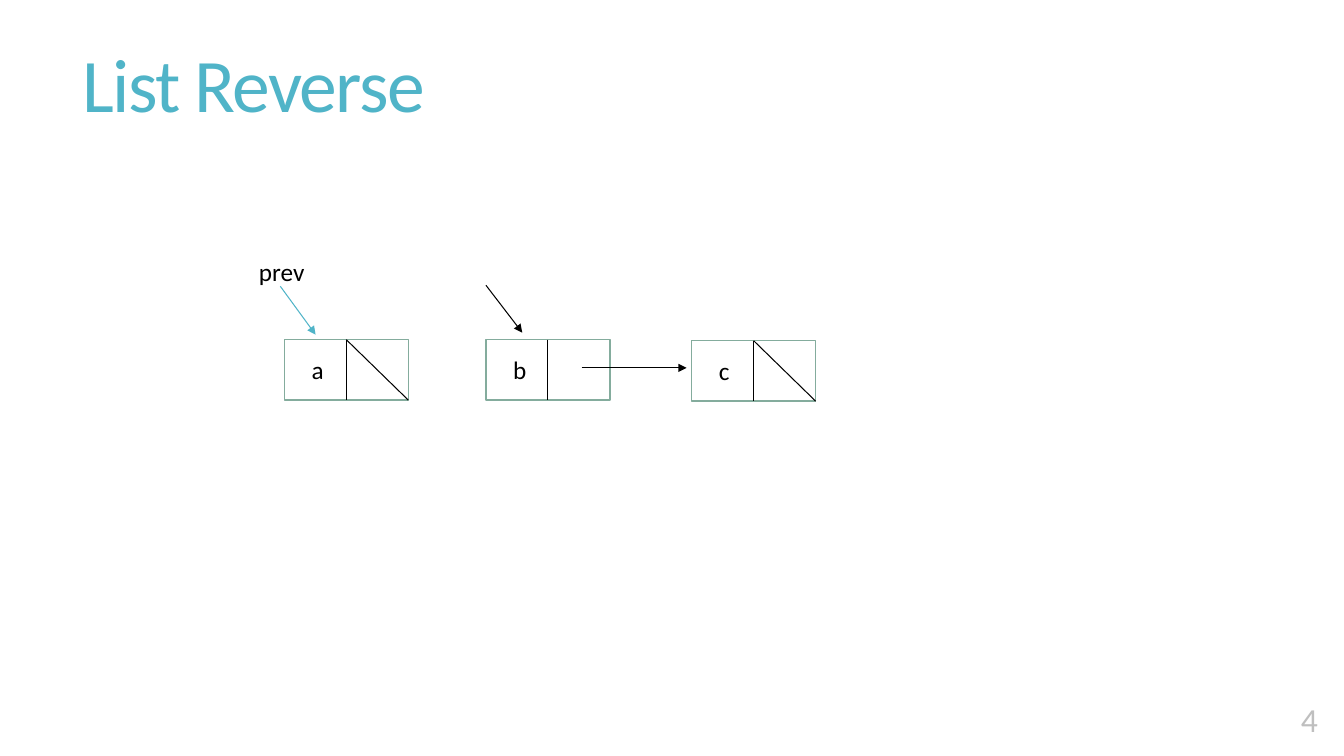
from dataclasses import dataclass

from lxml.etree import SubElement
from pptx import Presentation
from pptx.dml.color import RGBColor
from pptx.enum.shapes import MSO_CONNECTOR as CONN, MSO_SHAPE as SHAPE
from pptx.enum.text import MSO_ANCHOR as ANCHOR, PP_ALIGN as ALIGN
from pptx.oxml.ns import qn
from pptx.util import Inches, Pt

COLORS = {
    "accent": "50B4C8",
    "border": "84AC9D",
    "black": "000000",
    "white": "FFFFFF",
    "number": "BFBFBF",
}
FONT = "Calibri"
NODE_W, NODE_H = 1.23, 0.6


@dataclass
class Node:
    label: str
    x: float
    y: float
    is_last: bool


@dataclass
class Arrow:
    x1: float
    y1: float
    x2: float
    y2: float
    color: str = "black"


NODES = [
    Node("a", 2.82, 3.37, True),
    Node("b", 4.82, 3.37, False),
    Node("c", 6.86, 3.38, True),
]
ARROWS = [
    Arrow(2.78, 2.84, 3.13, 3.32, "accent"),
    Arrow(4.82, 2.83, 5.18, 3.3),
    Arrow(5.77, 3.65, 6.81, 3.65),
]


def rgb(name: str) -> RGBColor:
    return RGBColor.from_string(COLORS[name])


def write(sp, text: str, *, size: float = 18, color: str = "black",
          align=ALIGN.LEFT, anchor=ANCHOR.TOP, left: float = 0.1,
          line_spacing: float = 1.0, tracking: float = 0) -> None:
    tf = sp.text_frame
    tf.word_wrap = True
    tf.vertical_anchor = anchor
    tf.margin_left = Inches(left)
    p = tf.paragraphs[0]
    p.alignment = align
    p.line_spacing = line_spacing
    r = p.add_run()
    r.text = text
    r.font.name = FONT
    r.font.size = Pt(size)
    r.font.color.rgb = rgb(color)
    if tracking:
        r.font._element.set("spc", str(round(tracking * 100)))


def add_text(s, x: float, y: float, w: float, h: float, text: str, **fmt) -> None:
    sp = s.shapes.add_textbox(Inches(x), Inches(y), Inches(w), Inches(h))
    write(sp, text, **fmt)


def add_line(s, x1: float, y1: float, x2: float, y2: float,
             color: str = "black", arrow: bool = False) -> None:
    c = s.shapes.add_connector(CONN.STRAIGHT, Inches(x1), Inches(y1),
                               Inches(x2), Inches(y2))
    c.line.color.rgb = rgb(color)
    c.line.width = Pt(0.75)
    if arrow:
        SubElement(c.line._get_or_add_ln(), qn("a:tailEnd"), type="triangle")
    SubElement(c._element.spPr, qn("a:effectLst"))


def add_node(s, node: Node) -> None:
    sp = s.shapes.add_shape(SHAPE.RECTANGLE, Inches(node.x), Inches(node.y),
                            Inches(NODE_W), Inches(NODE_H))
    sp.shadow.inherit = False
    sp.fill.solid()
    sp.fill.fore_color.rgb = rgb("white")
    sp.line.color.rgb = rgb("border")
    sp.line.width = Pt(1)
    write(sp, node.label, anchor=ANCHOR.MIDDLE, left=0.27)

    # Divider between value and pointer; a diagonal marks a null pointer
    middle, bottom = node.x + NODE_W / 2, node.y + NODE_H
    add_line(s, middle, node.y, middle, bottom)
    if node.is_last:
        add_line(s, middle, node.y, node.x + NODE_W, bottom)


def main() -> None:
    prs = Presentation()
    prs.slide_width, prs.slide_height = Inches(13.33), Inches(7.5)
    s = prs.slides.add_slide(prs.slide_layouts[6])

    # Title and slide number
    add_text(s, 0.72, -0.02, 11.78, 1.81, "List Reverse", size=54, color="accent",
             anchor=ANCHOR.MIDDLE, line_spacing=0.85, tracking=-1.2)
    add_text(s, 10.93, 6.69, 2.24, 0.69, "4", size=24, color="number",
             align=ALIGN.RIGHT, anchor=ANCHOR.BOTTOM)

    # Linked list
    for node in NODES:
        add_node(s, node)
    for a in ARROWS:
        add_line(s, a.x1, a.y1, a.x2, a.y2, a.color, arrow=True)
    add_text(s, 2.47, 2.49, 1.18, 0.4, "prev")

    prs.save("out.pptx")


if __name__ == "__main__":
    main()
